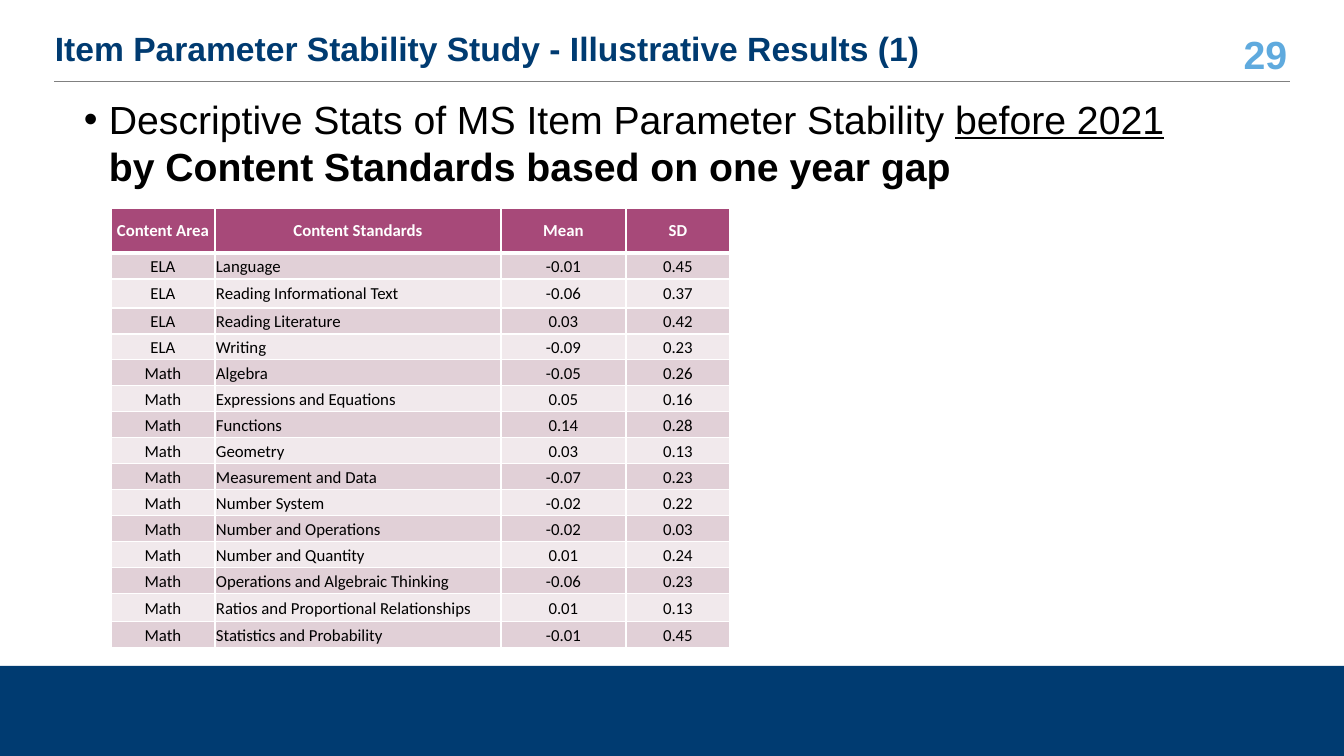
"""Build the slide on item parameter stability by content standard."""
from dataclasses import dataclass

from lxml.etree import SubElement
from pptx import Presentation
from pptx.dml.color import RGBColor
from pptx.enum.shapes import MSO_CONNECTOR, MSO_SHAPE
from pptx.enum.text import MSO_ANCHOR, PP_ALIGN
from pptx.oxml.ns import qn
from pptx.util import Pt

SCALE = 914400 / 100.8


@dataclass(frozen=True)
class Theme:
    navy: str = "003B71"
    sky: str = "5FAADE"
    gray: str = "808080"
    black: str = "000000"
    white: str = "FFFFFF"
    plum: str = "A74979"
    bands: tuple = ("E1D0D7", "F1E9EC")
    sans: str = "Arial"
    grid: str = "Calibri"
    title: int = 24
    body: int = 28
    cell: int = 12


THEME = Theme()
HEADS = ("Content Area", "Content Standards", "Mean", "SD")
STATS = {
    "ELA": (
        ("Language", "-0.01", "0.45"),
        ("Reading Informational Text", "-0.06", "0.37"),
        ("Reading Literature", "0.03", "0.42"),
        ("Writing", "-0.09", "0.23"),
    ),
    "Math": (
        ("Algebra", "-0.05", "0.26"),
        ("Expressions and Equations", "0.05", "0.16"),
        ("Functions", "0.14", "0.28"),
        ("Geometry", "0.03", "0.13"),
        ("Measurement and Data", "-0.07", "0.23"),
        ("Number System", "-0.02", "0.22"),
        ("Number and Operations", "-0.02", "0.03"),
        ("Number and Quantity", "0.01", "0.24"),
        ("Operations and Algebraic Thinking", "-0.06", "0.23"),
        ("Ratios and Proportional Relationships", "0.01", "0.13"),
        ("Statistics and Probability", "-0.01", "0.45"),
    ),
}
WIDTHS = (104, 286, 125, 104)
HIGH = {0: 45, 2: 29, 14: 28}
ROW = 26


def px(*sizes):
    return [round(size * SCALE) for size in sizes]


def style(item, values):
    for name, value in values.items():
        setattr(item, name, value)


def write(para, text, size, color, face=THEME.sans, **extra):
    run = para.add_run()
    run.text = text
    style(run.font, {"name": face, "size": Pt(size), **extra})
    run.font.color.rgb = RGBColor.from_string(color)


def add_text(slide, place, runs, frame, para):
    box = slide.shapes.add_textbox(*px(*place)).text_frame
    style(box, {"word_wrap": True, **frame})
    line = box.paragraphs[0]
    style(line, para)
    for text, size, color, extra in runs:
        write(line, text, size, color, **extra)
    return line


def add_bullet(para, indent):
    props = para._p.get_or_add_pPr()
    size = px(indent)[0]
    props.set("marL", str(size))
    props.set("indent", str(-size))
    SubElement(props, qn("a:buFont"), typeface=THEME.sans)
    SubElement(props, qn("a:buChar"), char="•")


def add_band(slide, place):
    band = slide.shapes.add_shape(MSO_SHAPE.RECTANGLE, *px(*place))
    band.shadow.inherit = False
    band.fill.solid()
    band.fill.fore_color.rgb = RGBColor.from_string(THEME.navy)
    band.line.fill.background()


def add_rule(slide, ends):
    rule = slide.shapes.add_connector(MSO_CONNECTOR.STRAIGHT, *px(*ends))
    rule.line.width = Pt(0.5)
    rule.line.color.rgb = RGBColor.from_string(THEME.gray)
    SubElement(rule._element.spPr, qn("a:effectLst"))


def edge(cell, widths):
    props = cell._tc.get_or_add_tcPr()
    for side, width in widths.items():
        line = SubElement(props, qn(f"a:ln{side}"), w=str(Pt(width)))
        fill = SubElement(line, qn("a:solidFill"))
        SubElement(fill, qn("a:srgbClr"), val=THEME.white)


def fill_cell(cell, text, row, col):
    head = row == 0
    edge(cell, {"L": 1, "R": 1, "T": 3 if row == 1 else 1, "B": 3 if head else 1})
    pad = px(1)[0]
    style(cell, {
        "margin_left": pad, "margin_right": pad, "margin_top": pad,
        "margin_bottom": 0, "vertical_anchor": MSO_ANCHOR.MIDDLE,
    })
    cell.fill.solid()
    tint = THEME.plum if head else THEME.bands[(row - 1) % 2]
    cell.fill.fore_color.rgb = RGBColor.from_string(tint)
    para = cell.text_frame.paragraphs[0]
    left = col == 1 and not head
    para.alignment = PP_ALIGN.LEFT if left else PP_ALIGN.CENTER
    color = THEME.white if head else THEME.black
    write(para, text, THEME.cell, color, THEME.grid, bold=head)


def add_grid(slide, left, top):
    rows = [HEADS] + [(area, *stat) for area, stats in STATS.items() for stat in stats]
    highs = [HIGH.get(row, ROW) for row in range(len(rows))]
    place = px(left, top, sum(WIDTHS), sum(highs))
    grid = slide.shapes.add_table(len(rows), len(HEADS), *place).table
    grid.horz_banding = False
    for col, width in zip(grid.columns, px(*WIDTHS)):
        col.width = width
    for row, high in zip(grid.rows, px(*highs)):
        row.height = high
    for row, texts in enumerate(rows):
        for col, text in enumerate(texts):
            fill_cell(grid.cell(row, col), text, row, col)


def main():
    deck = Presentation()
    deck.slide_width, deck.slide_height = px(1344, 756)
    slide = deck.slides.add_slide(deck.slide_layouts[6])
    middle = {"vertical_anchor": MSO_ANCHOR.MIDDLE}
    add_band(slide, (0, 666, 1344, 90))
    add_text(slide, (1217, 33, 80, 42),
             [("29", THEME.body, THEME.sky, {"bold": True})],
             middle, {"alignment": PP_ALIGN.RIGHT})
    add_rule(slide, (1290, 81, 54, 81))
    add_text(slide, (45, 30, 1169, 42),
             [("Item Parameter Stability Study - Illustrative Results (1)",
               THEME.title, THEME.navy, {"bold": True})],
             middle, {"line_spacing": 0.9})
    parts = (
        ("Descriptive Stats of MS Item Parameter Stability ", {}),
        ("before 2021 ", {"underline": True}),
        ("by Content Standards based on one year gap", {"bold": True}),
    )
    point = add_text(slide, (74, 90, 1112, 123),
                     [(text, THEME.body, THEME.black, extra) for text, extra in parts],
                     {}, {"space_after": Pt(6)})
    add_bullet(point, 25)
    add_grid(slide, 111, 208)
    deck.save("out.pptx")


if __name__ == "__main__":
    main()
